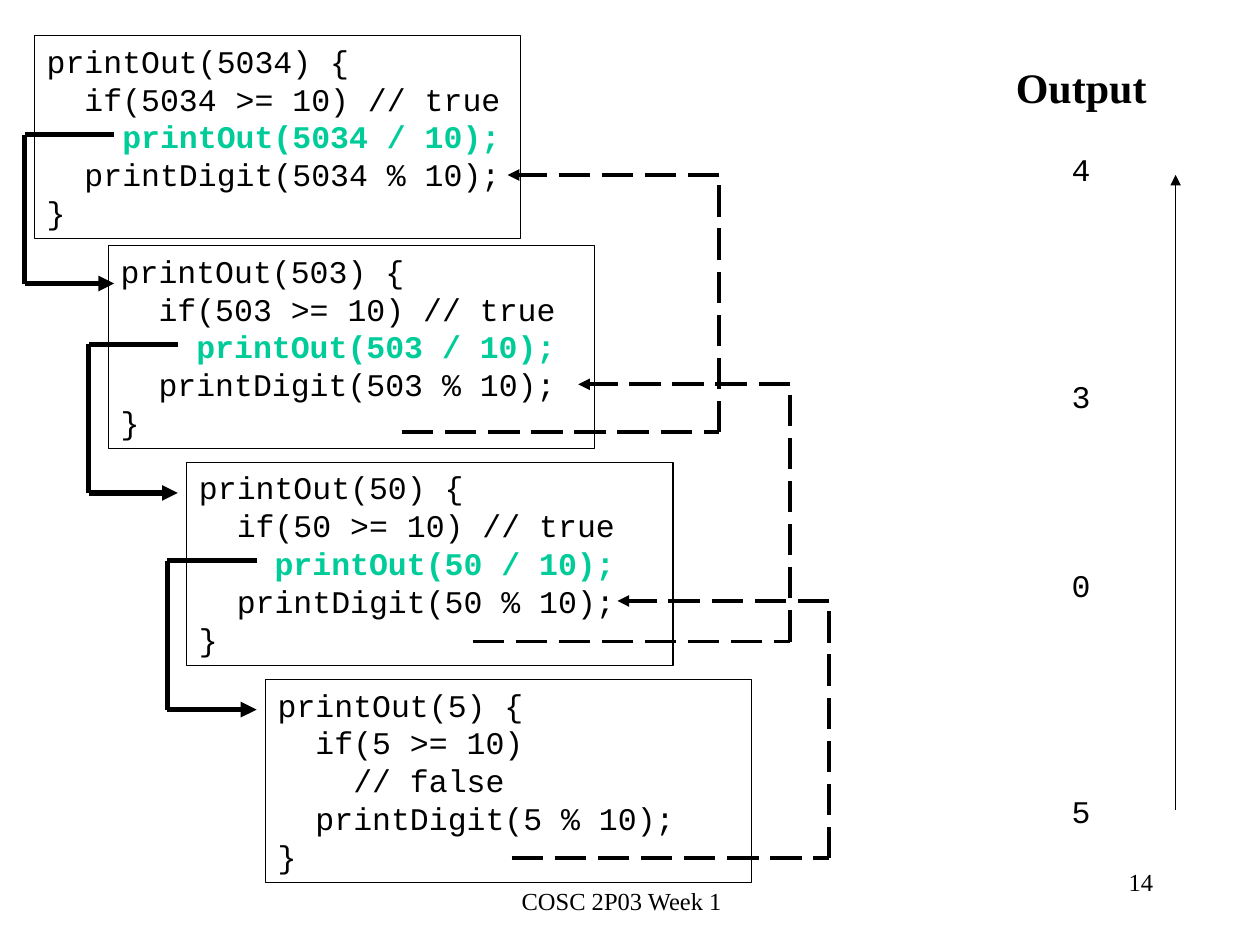
from lxml import etree
from pptx import Presentation
from pptx.dml.color import RGBColor
from pptx.enum import dml, shapes, text
from pptx.oxml import ns
from pptx.util import Pt

INK = {"black": "000000", "green": "00CC99"}
MONO, SERIF = "Courier New", "Times New Roman"
LEFT, MID, RIGHT = text.PP_ALIGN.LEFT, text.PP_ALIGN.CENTER, text.PP_ALIGN.RIGHT
PITCH = 21.6


class Deck:
    def __init__(self, wide, high):
        self.file = Presentation()
        self.file.slide_width, self.file.slide_height = Pt(wide), Pt(high)
        self.slide = self.file.slides.add_slide(self.file.slide_layouts[6])

    def color(self, name):
        return RGBColor.from_string(INK[name])

    def frame(self, shape):
        frame = shape.text_frame
        frame.word_wrap = True
        frame.vertical_anchor = text.MSO_ANCHOR.TOP
        return frame

    def label(self, x, y, wide, high):
        return self.frame(self.slide.shapes.add_textbox(Pt(x), Pt(y), Pt(wide), Pt(high)))

    def box(self, x, y, wide, high):
        shape = self.slide.shapes.add_shape(
            shapes.MSO_SHAPE.RECTANGLE, Pt(x), Pt(y), Pt(wide), Pt(high))
        shape.shadow.inherit = False
        shape.fill.background()
        shape.line.color.rgb = self.color("black")
        shape.line.width = Pt(0.75)
        return self.frame(shape)

    def para(self, frame, words, font=MONO, size=18, align=LEFT, ink="black",
             bold=False, indent=0, gap=0):
        para = frame.paragraphs[0]
        if para.runs:
            para = frame.add_paragraph()
        para.alignment = align
        para.space_before = Pt(gap)
        if font == MONO:
            para.line_spacing = Pt(PITCH)
        if indent:
            para._p.get_or_add_pPr().set("marL", str(Pt(indent)))
        run = para.add_run()
        run.text = words
        run.font.name, run.font.size, run.font.bold = font, Pt(size), bold
        run.font.color.rgb = self.color(ink)

    def line(self, start, end, width, tip=False, dash=False, home=None):
        home = home or self.slide.shapes
        wire = home.add_connector(
            shapes.MSO_CONNECTOR.STRAIGHT, *map(Pt, start), *map(Pt, end))
        wire.line.color.rgb = self.color("black")
        wire.line.width = Pt(width)
        if dash:
            wire.line.dash_style = dml.MSO_LINE.LONG_DASH
        if tip:
            tail = etree.SubElement(wire.line._get_or_add_ln(), ns.qn("a:tailEnd"))
            tail.set("type", "triangle")
        etree.SubElement(wire._element.spPr, ns.qn("a:effectLst"))

    def route(self, spots, width, dash=False, home=None):
        last = len(spots) - 2
        for i, (start, end) in enumerate(zip(spots, spots[1:])):
            self.line(start, end, width, i == last, dash, home)


def main():
    deck = Deck(720, 540)

    foot = deck.label(241.2, 502.6, 228.2, 21.6)
    deck.para(foot, "COSC 2P03 Week 1", SERIF, 14, MID)
    page = deck.label(516, 492, 150, 36)
    deck.para(page, "14", SERIF, 14, RIGHT)

    calls = [(5034, 19.6, 20.4), (503, 61.9, 140.4), (50, 106.6, 264.2), (5, 151.6, 388.2)]
    for num, x, y in calls:
        deep = num >= 10
        code = deck.box(x, y, 278, 116)
        deck.para(code, f"printOut({num}) {{")
        deck.para(code, f"if({num} >= 10)" + (" // true" if deep else ""), indent=21.6)
        deck.para(code, f"printOut({num} / 10);" if deep else "// false",
                  ink="green" if deep else "black", bold=deep, indent=43.2)
        deck.para(code, f"printDigit({num} % 10);", indent=21.6)
        deck.para(code, "}")

    for x, y in [(14.2, 77), (50.6, 196.7), (95.6, 320.5)]:
        far, low = x + 51, y + 85
        deck.route([(far, y), (x, y), (x, low), (far, low)], 3)

    out = deck.label(535.7, 31.7, 164.2, 447)
    deck.para(out, "Output", SERIF, 24, MID, bold=True)
    for digit, skip in [("4", 1), ("3", 5), ("0", 4), ("5", 5)]:
        deck.para(out, digit, align=MID, gap=skip * PITCH)
    deck.line((671.8, 463), (671.8, 100), 0.75, tip=True)

    for x, y in [(473.8, 490.4), (451.4, 366.6), (411.1, 247)]:
        top = y - 147
        group = deck.slide.shapes.add_group_shape()
        deck.route([(x - 181.4, y), (x, y), (x, top), (x - 121, top)],
                   2.25, True, group.shapes)

    deck.file.save("out.pptx")


if __name__ == "__main__":
    main()
